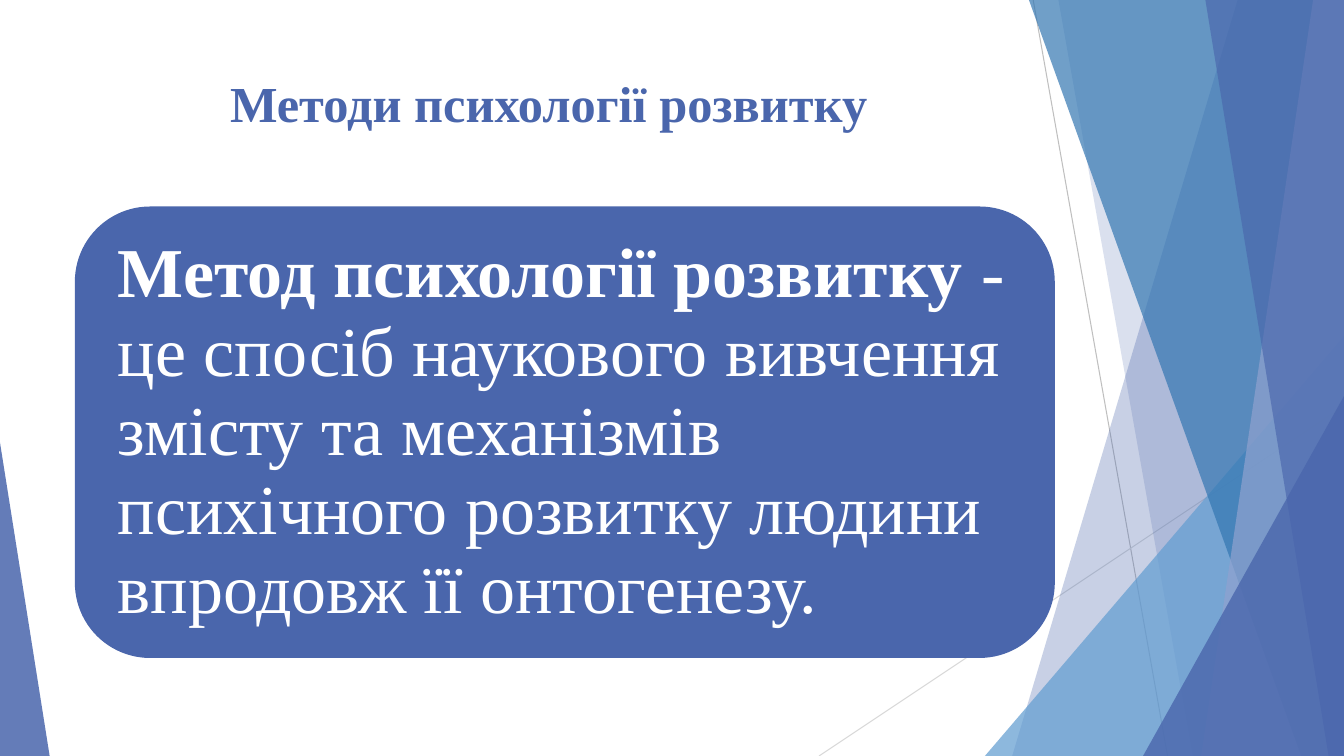
from dataclasses import dataclass

from lxml.etree import SubElement
from pptx import Presentation
from pptx.dml.color import RGBColor
from pptx.enum.shapes import MSO_CONNECTOR, MSO_SHAPE
from pptx.enum.text import MSO_ANCHOR, PP_ALIGN
from pptx.oxml.ns import qn
from pptx.util import Pt

WIDTH, HEIGHT = 960, 540
INDIGO = "4A66AC"
FONT = "Times New Roman"


@dataclass
class Ray:
    start: tuple[float, float]
    end: tuple[float, float]
    color: str


@dataclass
class Band:
    top_x: float
    bottom_x: float
    color: str
    opacity: int


@dataclass
class Wedge:
    left: float
    top: float
    width: float
    apex: float
    color: str
    opacity: int


RAYS = [
    Ray((738, 0), (834, HEIGHT), "BFBFBF"),
    Ray((WIDTH, 290), (585, HEIGHT), "D9D9D9"),
]
FACETS = [
    Band(884, 723, INDIGO, 30),
    Band(756, 852, INDIGO, 20),
    Wedge(703.5, 240, 256.5, 1, "629DD1", 72),
    Band(735, 929.5, "3477B2", 70),
    Band(938, 858, "90A2CF", 70),
    Band(861, 949, INDIGO, 65),
    Wedge(816.5, 283, 143.5, 1, INDIGO, 80),
    Wedge(0, 316, 35.5, 0, INDIGO, 85),
]


def rgb(color: str) -> RGBColor:
    return RGBColor.from_string(color)


def paint(shape, color: str, opacity: int = 100) -> None:
    shape.shadow.inherit = False
    shape.line.fill.background()
    shape.fill.solid()
    shape.fill.fore_color.rgb = rgb(color)
    if opacity < 100:
        tint = shape.fill._xPr.find(".//" + qn("a:srgbClr"))
        SubElement(tint, qn("a:alpha"), val=str(opacity * 1000))


def style_run(run, size: float, color: str, bold: bool) -> None:
    run.font.name = FONT
    run.font.size = Pt(size)
    run.font.bold = bold
    run.font.color.rgb = rgb(color)


def draw_ray(shapes, ray: Ray) -> None:
    line = shapes.add_connector(
        MSO_CONNECTOR.STRAIGHT, *map(Pt, ray.start + ray.end)
    )
    line.line.color.rgb = rgb(ray.color)
    line.line.width = Pt(0.75)
    SubElement(line._element.spPr, qn("a:effectLst"))


def draw_band(shapes, band: Band) -> None:
    outline = shapes.build_freeform(Pt(band.top_x), 0)
    corners = [(WIDTH, 0), (WIDTH, HEIGHT), (band.bottom_x, HEIGHT)]
    outline.add_line_segments([(Pt(x), Pt(y)) for x, y in corners], close=True)
    paint(outline.convert_to_shape(), band.color, band.opacity)


def draw_wedge(shapes, wedge: Wedge) -> None:
    triangle = shapes.add_shape(
        MSO_SHAPE.ISOSCELES_TRIANGLE,
        Pt(wedge.left), Pt(wedge.top), Pt(wedge.width), Pt(HEIGHT - wedge.top),
    )
    triangle.adjustments[0] = wedge.apex
    paint(triangle, wedge.color, wedge.opacity)


def write_heading(heading) -> None:
    heading.left, heading.top = Pt(53.5), Pt(48)
    heading.width, heading.height = Pt(677), Pt(104)
    frame = heading.text_frame
    frame.text = "Методи психології розвитку"
    frame.vertical_anchor = MSO_ANCHOR.TOP
    frame.paragraphs[0].alignment = PP_ALIGN.CENTER
    style_run(frame.paragraphs[0].runs[0], 36, INDIGO, True)


def draw_definition(shapes) -> None:
    card = shapes.add_shape(
        MSO_SHAPE.ROUNDED_RECTANGLE, Pt(53.5), Pt(147.5), Pt(700), Pt(322.5)
    )
    paint(card, INDIGO)
    frame = card.text_frame
    frame.word_wrap = True
    frame.vertical_anchor = MSO_ANCHOR.MIDDLE
    frame.margin_left = frame.margin_right = Pt(15)
    frame.margin_top = frame.margin_bottom = Pt(15)
    definition = frame.paragraphs[0]
    definition.alignment = PP_ALIGN.LEFT
    definition.line_spacing = 0.94
    for wording, bold in [
        ("Метод психології розвитку ", True),
        ("- це спосіб наукового вивчення змісту та механізмів "
         "психічного розвитку людини впродовж її онтогенезу.", False),
    ]:
        run = definition.add_run()
        run.text = wording
        style_run(run, 50, "FFFFFF", bold)


def main() -> None:
    deck = Presentation()
    deck.slide_width, deck.slide_height = Pt(WIDTH), Pt(HEIGHT)
    slide = deck.slides.add_slide(deck.slide_layouts[5])
    for ray in RAYS:
        draw_ray(slide.shapes, ray)
    for facet in FACETS:
        if isinstance(facet, Band):
            draw_band(slide.shapes, facet)
        else:
            draw_wedge(slide.shapes, facet)
    write_heading(slide.shapes.title)
    draw_definition(slide.shapes)
    deck.save("out.pptx")


if __name__ == "__main__":
    main()
